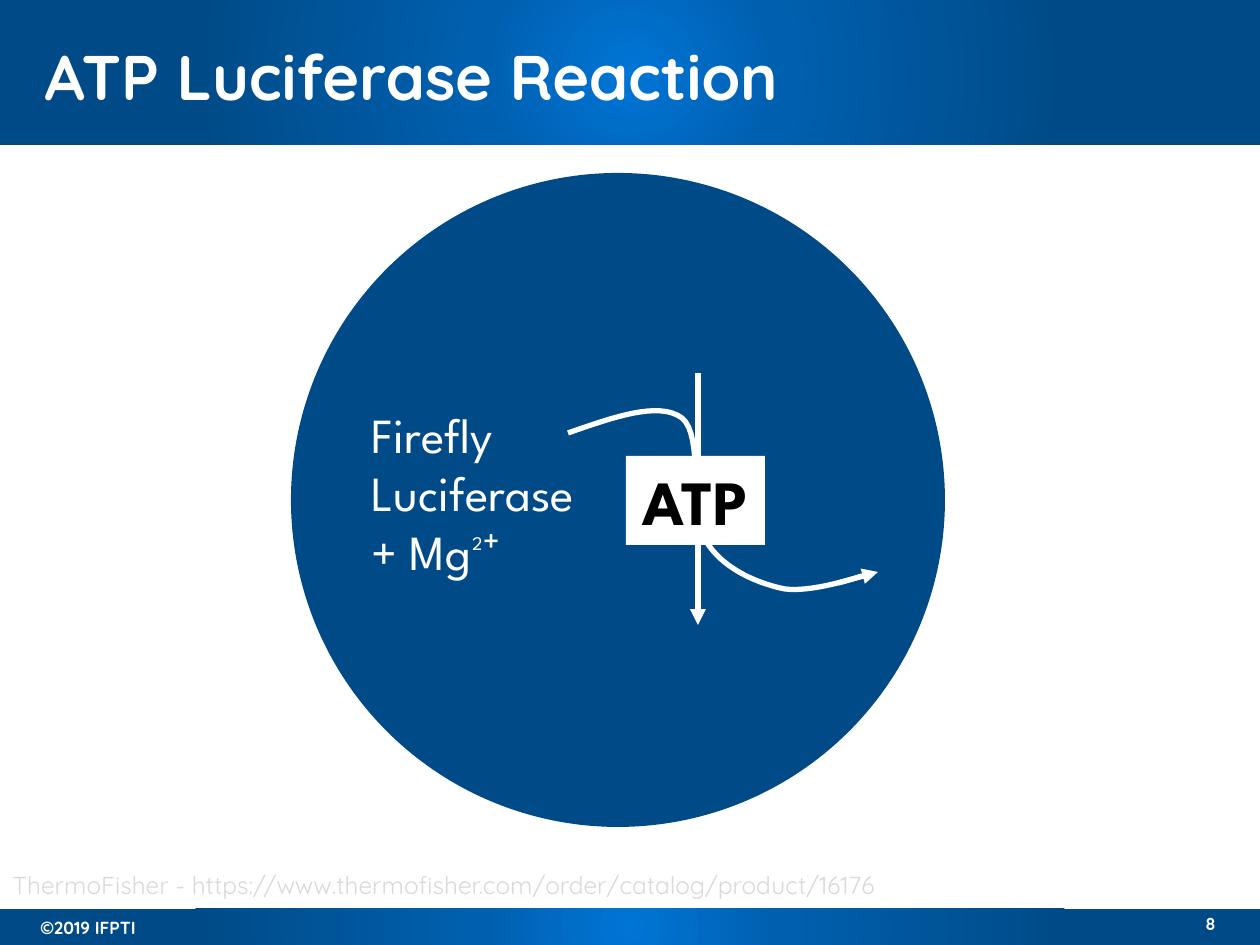
from dataclasses import dataclass

import lxml.etree
import pptx
import pptx.dml.color
import pptx.enum.shapes
import pptx.enum.text
import pptx.oxml
import pptx.oxml.ns
import pptx.util

RGBColor = pptx.dml.color.RGBColor
Shape = pptx.enum.shapes.MSO_SHAPE
Align = pptx.enum.text.PP_ALIGN
Anchor = pptx.enum.text.MSO_ANCHOR

EMU_PER_PX = 914400 / 126
WHITE = RGBColor(0xFF, 0xFF, 0xFF)
BLACK = RGBColor(0x00, 0x00, 0x00)
NAVY = RGBColor(0x00, 0x4B, 0x87)
MID_BLUE = RGBColor(0x00, 0x60, 0xB0)
BRIGHT_BLUE = RGBColor(0x00, 0x75, 0xD6)
PALE_GREY = RGBColor(0xD9, 0xD9, 0xD9)
BAND_STOPS = [(0, BRIGHT_BLUE), (23, MID_BLUE), (69, NAVY), (97, NAVY)]
LINE_WIDTH = pptx.util.Pt(3)

Point = tuple[int, int]


@dataclass
class Box:
    left: int
    top: int
    width: int
    height: int

    def emu(self) -> list[int]:
        return [px(value) for value in (self.left, self.top, self.width, self.height)]


@dataclass
class Label:
    box: Box
    lines: list[str]
    size: int
    font: str = "Quicksand"
    color: RGBColor = WHITE
    bold: bool = False
    align: Align = Align.LEFT
    wrap: bool = True


@dataclass
class Arrow:
    start: Point
    end: Point


BANDS = [Box(0, 0, 1260, 145), Box(0, 909, 1260, 36)]
CELL = Box(291, 173, 654, 654)
ATP_BOX = Box(626, 456, 139, 89)
TITLE = Label(Box(32, 16, 1174, 118), ["ATP Luciferase Reaction"], 36, bold=True)
LABELS = [
    Label(Box(28, 911, 168, 34), ["©2019 IFPTI"], 10, bold=True),
    Label(Box(1107, 907, 121, 34), ["8"], 10, bold=True, align=Align.RIGHT),
    Label(Box(0, 864, 1260, 43),
          ["ThermoFisher - https://www.thermofisher.com/order/catalog/product/16176"],
          14, color=PALE_GREY),
    Label(Box(359, 398, 268, 190), ["Firefly", "Luciferase", "+ Mg²⁺"], 28,
          font="League Spartan", wrap=False),
]
ATP = Label(ATP_BOX, ["ATP"], 36, "League Spartan", BLACK, True, Align.CENTER)
ARROWS = [Arrow((698, 373), (698, 625)), Arrow((838, 583), (878, 572))]
# Start point, then two control points and an end point for each curve
REACTION_CURVE = [
    (568, 433),
    (614, 417), (659, 401), (682, 418),
    (704, 436), (689, 512), (706, 541),
    (722, 568), (755, 582), (780, 588),
    (806, 595), (862, 576), (862, 576),
]


def px(value: float) -> int:
    return round(value * EMU_PER_PX)


def write_text(frame, label: Label) -> None:
    frame.word_wrap = label.wrap
    frame.text = "\n".join(label.lines)
    formats = {"name": label.font, "size": pptx.util.Pt(label.size), "bold": label.bold}
    for para in frame.paragraphs:
        para.alignment = label.align
        for span in para.runs:
            for name, value in formats.items():
                setattr(span.font, name, value)
            span.font.color.rgb = label.color


def add_solid(slide, kind: Shape, box: Box, color: RGBColor):
    shape = slide.shapes.add_shape(kind, *box.emu())
    shape.shadow.inherit = False
    shape.fill.solid()
    shape.fill.fore_color.rgb = color
    shape.line.fill.background()
    return shape


def add_band(slide, box: Box) -> None:
    """Draw a bar whose gradient spreads from its centre."""
    band = add_solid(slide, Shape.RECTANGLE, box, NAVY)
    stops = "".join(f'<a:gs pos="{percent * 1000}"><a:srgbClr val="{color}"/></a:gs>'
                    for percent, color in BAND_STOPS)
    gradient = pptx.oxml.parse_xml(
        f'<a:gradFill {pptx.oxml.ns.nsdecls("a")} rotWithShape="1">'
        f'<a:gsLst>{stops}</a:gsLst><a:path path="circle">'
        '<a:fillToRect l="50000" t="50000" r="50000" b="50000"/></a:path></a:gradFill>')
    properties = band._element.spPr
    properties.replace(properties.find(pptx.oxml.ns.qn("a:solidFill")), gradient)


def add_label(slide, label: Label) -> None:
    write_text(slide.shapes.add_textbox(*label.box.emu()).text_frame, label)


def add_arrow(slide, arrow: Arrow) -> None:
    ends = [px(value) for value in arrow.start + arrow.end]
    connector = slide.shapes.add_connector(pptx.enum.shapes.MSO_CONNECTOR.STRAIGHT, *ends)
    connector.line.color.rgb = WHITE
    connector.line.width = LINE_WIDTH
    qn = pptx.oxml.ns.qn
    lxml.etree.SubElement(connector.line._get_or_add_ln(), qn("a:tailEnd"), type="triangle")
    lxml.etree.SubElement(connector._element.spPr, qn("a:effectLst"))


def curve_points(points: list[Point], steps: int = 16) -> list[tuple[float, float]]:
    """Sample a chain of cubic Bézier curves, leaving out the start point."""
    sampled = []
    for first in range(0, len(points) - 1, 3):
        controls = points[first:first + 4]
        for step in range(1, steps + 1):
            t = step / steps
            weights = ((1 - t) ** 3, 3 * t * (1 - t) ** 2, 3 * t ** 2 * (1 - t), t ** 3)
            sampled.append(tuple(sum(weight * point[axis]
                                     for weight, point in zip(weights, controls))
                                 for axis in (0, 1)))
    return sampled


def add_curve(slide, points: list[Point]) -> None:
    builder = slide.shapes.build_freeform(px(points[0][0]), px(points[0][1]))
    builder.add_line_segments([(px(x), px(y)) for x, y in curve_points(points)], close=False)
    curve = builder.convert_to_shape()
    curve.shadow.inherit = False
    curve.fill.background()
    curve.line.color.rgb = WHITE
    curve.line.width = LINE_WIDTH


def place_title(slide, label: Label) -> None:
    title = slide.shapes.title
    for name, value in zip(("left", "top", "width", "height"), label.box.emu()):
        setattr(title, name, value)
    write_text(title.text_frame, label)
    title.text_frame.vertical_anchor = Anchor.MIDDLE
    slide.shapes._spTree.append(title._element)  # bring in front of the header band


def main() -> None:
    deck = pptx.Presentation()
    deck.slide_width, deck.slide_height = px(1260), px(945)
    slide = deck.slides.add_slide(deck.slide_layouts[5])

    for band in BANDS:
        add_band(slide, band)
    place_title(slide, TITLE)
    add_solid(slide, Shape.OVAL, CELL, NAVY)
    for label in LABELS:
        add_label(slide, label)
    add_curve(slide, REACTION_CURVE)
    for arrow in ARROWS:
        add_arrow(slide, arrow)
    atp = add_solid(slide, Shape.RECTANGLE, ATP_BOX, WHITE)
    write_text(atp.text_frame, ATP)
    atp.text_frame.vertical_anchor = Anchor.MIDDLE

    deck.save("out.pptx")


if __name__ == "__main__":
    main()
